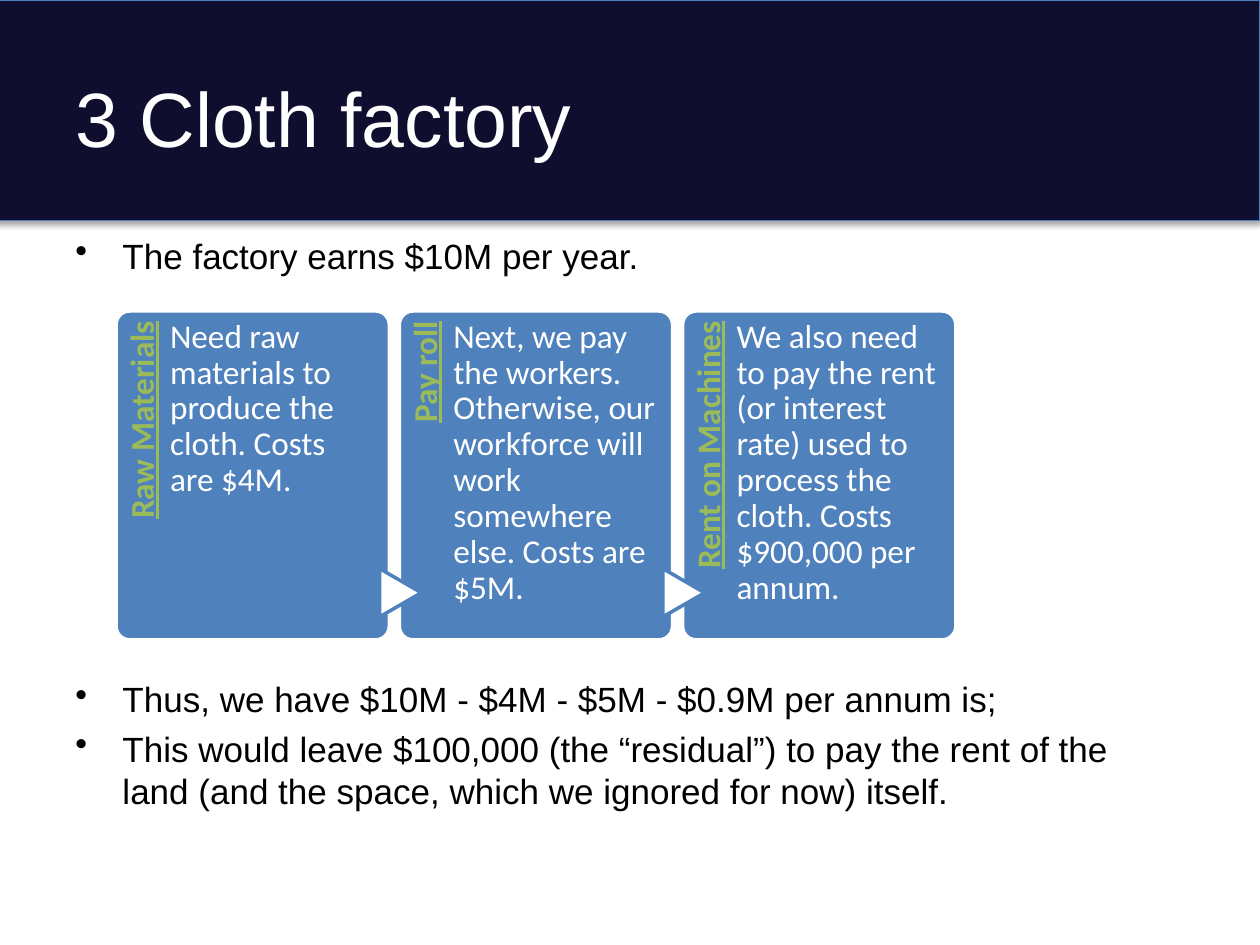
from lxml import etree
from pptx import Presentation
from pptx.dml.color import RGBColor
from pptx.enum.shapes import MSO_SHAPE
from pptx.enum.text import MSO_ANCHOR, PP_ALIGN
from pptx.oxml import parse_xml
from pptx.oxml.ns import nsdecls, qn
from pptx.util import Cm, Pt

RECT, ROUND = MSO_SHAPE.RECTANGLE, MSO_SHAPE.ROUNDED_RECTANGLE
ARROW = MSO_SHAPE.FLOWCHART_EXTRACT
TOP, MIDDLE = MSO_ANCHOR.TOP, MSO_ANCHOR.MIDDLE
LEFT, RIGHT = PP_ALIGN.LEFT, PP_ALIGN.RIGHT
NAVY, BLUE, GREEN = "100E2F", "4F81BD", "9BBB59"
WHITE, BLACK = "FFFFFF", "000000"

TITLE = {"name": "Arial", "size": Pt(44)}
BODY = {"name": "Arial", "size": Pt(20)}
CARD = {"name": "Calibri", "size": Pt(19)}
LABEL = {**CARD, "bold": True, "underline": True}

deck = Presentation()
deck.slide_width, deck.slide_height = Cm(25.4), Cm(19.05)
slide = deck.slides.add_slide(deck.slide_layouts[6])


def add_box(kind, place, fill, edge, width):
    box = slide.shapes.add_shape(kind, *map(Cm, place))
    box.shadow.inherit = False
    box.fill.solid()
    box.fill.fore_color.rgb = RGBColor.from_string(fill)
    box.line.color.rgb = RGBColor.from_string(edge)
    box.line.width = Pt(width)
    return box


def add_text(place, lines, font, color, align=LEFT, anchor=TOP, inset=None):
    box = slide.shapes.add_textbox(*map(Cm, place))
    frame = box.text_frame
    frame.word_wrap = True
    frame.vertical_anchor = anchor
    if inset:
        for side, size in inset.items():
            setattr(frame, "margin_" + side, Cm(size))
    frame.text = "\n".join(lines)
    for para in frame.paragraphs:
        para.alignment = align
        for key, value in font.items():
            setattr(para.font, key, value)
        para.font.color.rgb = RGBColor.from_string(color)
    return box


# Title band with a soft shadow below
band = add_box(RECT, (-0.1, 0, 25.5, 4.45), NAVY, "4B7EBC", 0.75)
glow = band._element.spPr.find(qn("a:effectLst"))
glow.append(parse_xml(
    f'<a:outerShdw {nsdecls("a")} blurRad="{Pt(3.1)}" dist="{Pt(1.8)}" '
    'dir="5400000" rotWithShape="0"><a:srgbClr val="000000">'
    '<a:alpha val="35000"/></a:srgbClr></a:outerShdw>'))
add_text((1.27, 0.76, 22.86, 3.18), ["3 Cloth factory"], TITLE, WHITE,
         anchor=MIDDLE)

# Bullets, with room for the cards after the first
points = [
    "The factory earns $10M per year.",
    "Thus, we have $10M - $4M - $5M - $0.9M per annum is;",
    "This would leave $100,000 (the “residual”) to pay the rent of the land "
    "(and the space, which we ignored for now) itself.",
]
body = add_text((1.27, 4.6, 22.86, 12.57), points, BODY, BLACK)
for para, space in zip(body.text_frame.paragraphs, (4, 229.5, 4)):
    para.space_before = Pt(space)
    props = para._p.get_or_add_pPr()
    props.set("marL", str(Cm(0.95)))
    props.set("indent", str(Cm(-0.95)))
    mark = etree.Element(qn("a:buChar"), char="•")
    props.find(qn("a:defRPr")).addprevious(mark)

# Cost cards, each with an upright label and an arrow from the one before
cards = [
    ("Raw Materials",
     "Need raw materials to produce the cloth. Costs are $4M."),
    ("Pay roll",
     "Next, we pay the workers. Otherwise, our workforce will work somewhere "
     "else. Costs are $5M."),
    ("Rent on Machines",
     "We also need to pay the rent (or interest rate) used to process the "
     "cloth. Costs $900,000 per annum."),
]
for i, (name, note) in enumerate(cards):
    x, y, high = 2.34 + 5.71 * i, 6.27, 6.63
    card = add_box(ROUND, (x, y, 5.51, high), BLUE, WHITE, 2)
    card.adjustments[0] = 0.05
    label = add_text((x - 2.16, 8.43, 5.44, 1.09), [name], LABEL, GREEN, RIGHT,
                     inset={"left": 0, "top": 0.17, "right": 0.22, "bottom": 0})
    label.rotation = 270
    if i:
        arrow = add_box(ARROW, (x - 0.46, 11.53, 0.97, 0.84), WHITE, BLUE, 2)
        arrow.rotation = 90
    text = add_text((x + 1.09, y, 4.11, high), [note], CARD, WHITE,
                    inset={"left": 0, "top": 0.17, "right": 0, "bottom": 0})
    for box in (label, text):
        box.text_frame.paragraphs[0].line_spacing = 0.9

deck.save("out.pptx")
